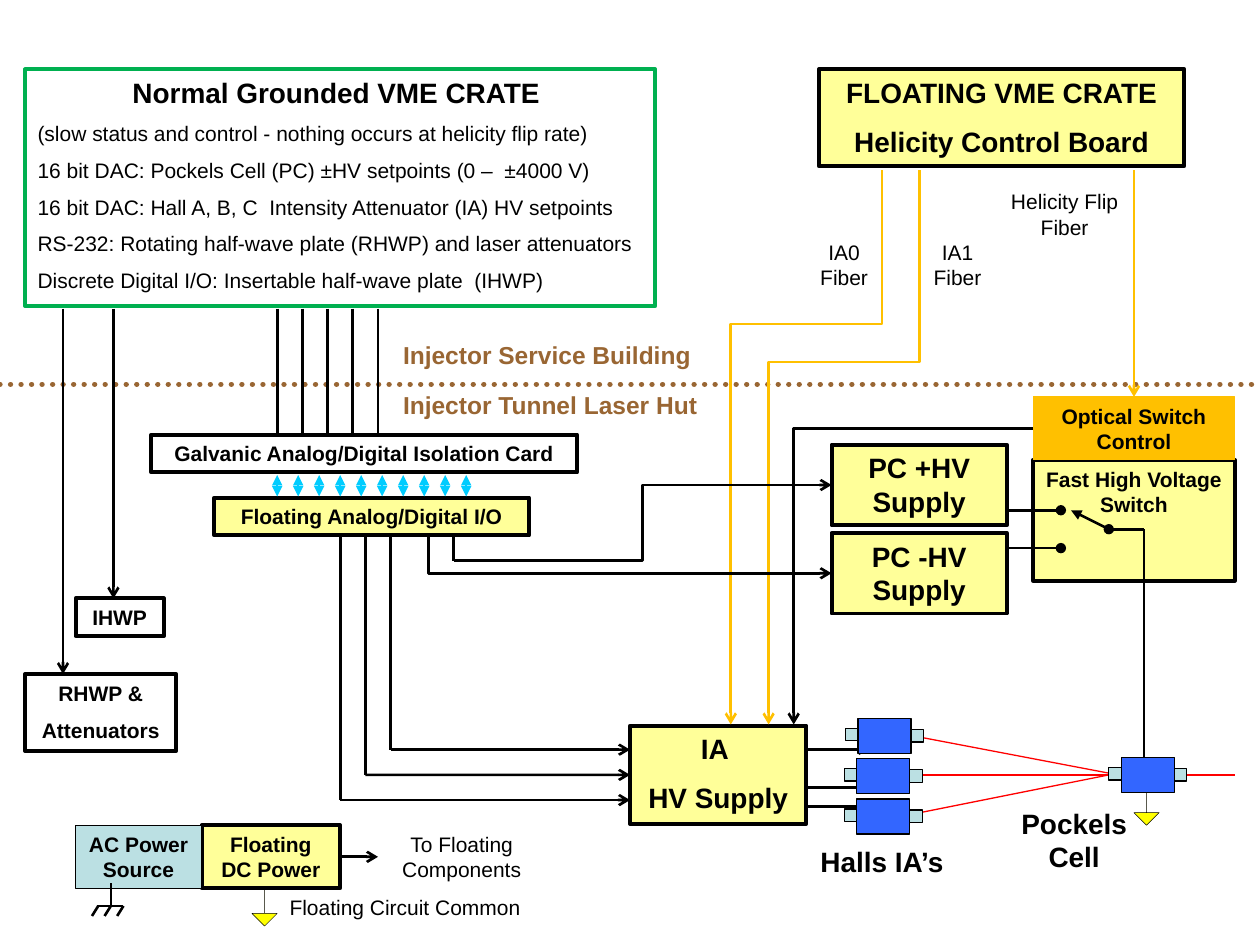
"""Build the helicity control and high-voltage wiring diagram slide."""
from lxml import etree
from pptx import Presentation
from pptx.dml.color import RGBColor
from pptx.enum.dml import MSO_LINE
from pptx.enum.shapes import MSO_CONNECTOR, MSO_SHAPE
from pptx.enum.text import MSO_ANCHOR, PP_ALIGN
from pptx.oxml.ns import qn
from pptx.util import Cm, Pt

RECT, DOWN_ARROW = MSO_SHAPE.RECTANGLE, MSO_SHAPE.DOWN_ARROW
STRAIGHT, ELBOW = MSO_CONNECTOR.STRAIGHT, MSO_CONNECTOR.ELBOW
LEFT, CENTER, TOP = PP_ALIGN.LEFT, PP_ALIGN.CENTER, MSO_ANCHOR.TOP
DOTTED = MSO_LINE.ROUND_DOT
TOP_SIDE, LEFT_SIDE, RIGHT_SIDE = 0, 1, 3
CM_PER_UNIT = 2.54
BLACK, YELLOW, AMBER, BROWN = "000000", "FFFF99", "FFC000", "996633"
PALE, BLUE, CYAN, RED, GREEN = "BBE0E3", "3366FF", "00CCFF", "FF0000", "00B050"

CRATE_TITLE = "Normal Grounded VME CRATE "
CRATE_DETAILS = [
    "(slow status and control - nothing occurs at helicity flip rate)",
    "16 bit DAC: Pockels Cell (PC) ±HV setpoints (0 –  ±4000 V)",
    "16 bit DAC: Hall A, B, C  Intensity Attenuator (IA) HV setpoints",
    "RS-232: Rotating half-wave plate (RHWP) and laser attenuators",
    "Discrete Digital I/O: Insertable half-wave plate  (IHWP)",
]
BOXES = [
    (["FLOATING VME CRATE", "Helicity Control Board"], (6.5, 0.55, 2.9, 0.77), 16, YELLOW),
    ([CRATE_TITLE], (0.2, 0.55, 5, 1.88), 16, None),
    (["Galvanic Analog/Digital Isolation Card"], (1.2, 3.45, 3.38, 0.3), 12, None),
    (["Floating Analog/Digital I/O"], (1.7, 3.95, 2.5, 0.3), 12, YELLOW),
    (["Floating DC Power"], (1.6, 6.55, 1.1, 0.5), 12, YELLOW),
    (["AC Power Source"], (0.6, 6.55, 1, 0.5), 12, PALE),
    (["PC +HV Supply"], (6.6, 3.53, 1.39, 0.64), 16, YELLOW),
    (["PC -HV Supply"], (6.6, 4.23, 1.39, 0.64), 16, YELLOW),
    (["Fast High Voltage Switch"], (8.2, 3.65, 1.6, 0.96), 12, YELLOW),
    (["Optical Switch Control"], (8.2, 3.15, 1.6, 0.5), 12, AMBER),
    (["RHWP &", "Attenuators"], (0.2, 5.35, 1.2, 0.61), 12, None),
    (["IHWP"], (0.6, 4.75, 0.7, 0.3), 12, None),
    (["IA ", "HV Supply"], (5, 5.76, 1.4, 0.78), 16, YELLOW),
]
OUTLINES = {CRATE_TITLE: (GREEN, 2.25), "AC Power Source": (BLACK, 0.75),
            "Optical Switch Control": (AMBER, 0.75)}
LABELS = [
    ("Injector Service Building", (3.1, 2.65, 2.58, 0.34), dict(size=14, bold=True, color=BROWN, align=LEFT)),
    ("Injector Tunnel Laser Hut", (3.1, 3.05, 2.65, 0.33), dict(size=14, bold=True, color=BROWN, align=LEFT)),
    ("To Floating Components", (3, 6.55, 1.33, 0.5), {}),
    ("Pockels Cell", (8, 6.35, 1.05, 0.64), dict(size=16, bold=True)),
    ("Floating Circuit Common", (2.2, 7.05, 2.2, 0.3), dict(align=LEFT)),
    ("Halls IA’s", (6.4, 6.65, 1.2, 0.37), dict(size=16, bold=True)),
    ("IA0 Fiber", (6.4, 1.85, 0.6, 0.5), {}),
    ("IA1 Fiber", (7.3, 1.85, 0.6, 0.5), {}),
    ("Helicity Flip Fiber", (7.9, 1.45, 1.1, 0.5), {}),
]
FLOATING_COMMONS = [(9, 6.15), (2, 6.95)]
BEAMS = [(9.4, 6.15, 9.8, 6.15), (7.3, 6.45, 8.8, 6.15),
         (7.3, 6.15, 8.8, 6.15), (7.3, 5.85, 8.82, 6.14)]
CHASSIS_GROUND = [(0.88, 7.01, 0.88, 7.19), (0.77, 7.19, 0.98, 7.19)] + [
    (x, 7.19, x - 0.05, 7.27) for x in (0.78, 0.88, 0.98)]
DAC_WIRES = [(2.2 + 0.2 * i, 2.45, 2.2 + 0.2 * i, 3.45) for i in range(5)]
IO_LINKS = [(2.2 + i / 6, 3.77, 2.2 + i / 6, 3.94) for i in range(10)]
SETPOINTS = [(2.7 + 0.2 * i, 6.35 - 0.2 * i) for i in range(3)]
SWITCH_CONTACTS = [(8.42, y, 8, y) for y in (4.05, 4.35)]
SWITCH_OUTPUT = [(9.08, 6.12, 9.08, 4.2), (9.08, 4.2, 8.8, 4.2)]
HALL_FEEDS = [(6.4, y, 6.9, y) for y in (5.95, 6.25, 6.4)]
PLATE_CONTROLS = [(0.5, 2.45, 0.5, 5.35), (0.9, 2.45, 0.9, 4.75)]
IA_FIBERS = [((7, 1.35, 5.8, 5.75), 0.278), ((7.3, 1.35, 6.1, 5.75), 0.346)]
CELLS = [(8.9, 6.01), (6.81, 5.7), (6.8, 6.02), (6.8, 6.34)]


def lengths(values):
    return [Cm(value * CM_PER_UNIT) for value in values]


def rgb(color):
    return RGBColor.from_string(color)


def write(frame, text, size=12, bold=False, color=BLACK, align=CENTER):
    first = not frame.text
    paragraph = frame.paragraphs[0] if first else frame.add_paragraph()
    paragraph.alignment = align
    paragraph.space_before = Pt(0 if first else round(size * 0.55, 1))
    run = paragraph.add_run()
    run.text = text
    run.font.name, run.font.size, run.font.bold = "Arial", Pt(size), bold
    run.font.color.rgb = rgb(color)


def add_block(shapes, box, fill, outline=BLACK, width=0.75, kind=RECT):
    block = shapes.add_shape(kind, *lengths(box))
    block.shadow.inherit = False
    if fill:
        block.fill.solid()
        block.fill.fore_color.rgb = rgb(fill)
    else:
        block.fill.background()
    block.line.color.rgb = rgb(outline)
    block.line.width = Pt(width)
    block.text_frame.word_wrap = True
    block.text_frame.vertical_anchor = TOP
    return block


def add_wire(shapes, ends, color=BLACK, width=1.5, head=None, tail=None,
             dash=None, kind=STRAIGHT, begin=None, end=None):
    wire = shapes.add_connector(kind, *lengths(ends))
    wire.line.color.rgb = rgb(color)
    wire.line.width = Pt(width)
    properties = wire._element.spPr
    outline = properties.find(qn("a:ln"))
    if dash:
        wire.line.dash_style = dash
        outline.set("cap", "rnd")
    for tag, arrow in (("a:headEnd", head), ("a:tailEnd", tail)):
        if arrow:
            etree.SubElement(outline, qn(tag), type=arrow)
    etree.SubElement(properties, qn("a:effectLst"))
    if begin:
        wire.begin_connect(*begin)
    if end:
        wire.end_connect(*end)
    return wire


def add_elbow(shapes, ends, turn, downward=False, **style):
    if downward:
        x1, y1, x2, y2 = ends
        middle_x, middle_y = (x1 + x2) / 2, (y1 + y2) / 2
        half_run, half_rise = (y2 - y1) / 2, (x1 - x2) / 2
        ends = (middle_x - half_run, middle_y - half_rise,
                middle_x + half_run, middle_y + half_rise)
    wire = add_wire(shapes, ends, kind=ELBOW, tail="arrow", **style)
    geometry = wire._element.spPr.find(qn("a:prstGeom"))
    if downward:
        wire._element.spPr.find(qn("a:xfrm")).set("rot", "5400000")
    if turn is None:
        geometry.set("prst", "bentConnector2")
    else:
        etree.SubElement(geometry.find(qn("a:avLst")), qn("a:gd"),
                         name="adj1", fmla=f"val {round(turn * 100000)}")


def main():
    deck = Presentation()
    deck.slide_width, deck.slide_height = lengths((10, 7.5))
    shapes = deck.slides.add_slide(deck.slide_layouts[6]).shapes
    parts = {}

    for beam in BEAMS:
        add_wire(shapes, beam, RED, 0.75)
    for x, y in FLOATING_COMMONS:
        common = add_block(shapes, (x, y, 0.2, 0.4), "FFFF00", width=0.25, kind=DOWN_ARROW)
        common.adjustments[0], common.adjustments[1] = 0, 0.5
    add_wire(shapes, (0, 3.05, 10, 3.05), BROWN, 3, dash=DOTTED)

    for lines, box, size, fill in BOXES:
        outline, width = OUTLINES.get(lines[0], (BLACK, 2.25))
        block = parts[lines[0]] = add_block(shapes, box, fill, outline, width)
        for line in lines:
            write(block.text_frame, line, size=size, bold=True)
    for detail in CRATE_DETAILS:
        write(parts[CRATE_TITLE].text_frame, detail, align=LEFT)
    for text, box, style in LABELS:
        label = parts[text] = shapes.add_textbox(*lengths(box))
        label.text_frame.word_wrap = True
        write(label.text_frame, text, **style)

    for ends in CHASSIS_GROUND + DAC_WIRES + SWITCH_OUTPUT:
        add_wire(shapes, ends)
    for ends in IO_LINKS:
        add_wire(shapes, ends, CYAN, 1.25, head="triangle", tail="triangle")
    for ends in SWITCH_CONTACTS:
        add_wire(shapes, ends, head="oval")
    add_wire(shapes, (8.8, 4.2, 8.5, 4.05), head="oval", tail="triangle")
    for ends in HALL_FEEDS:
        add_wire(shapes, ends, tail="triangle")
    for ends in PLATE_CONTROLS:
        add_wire(shapes, ends, tail="arrow")
    supply, optical = parts["IA "], parts["Optical Switch Control"]
    for index, (x, y) in enumerate(SETPOINTS):
        add_wire(shapes, (x, 4.25, x, y))
        add_wire(shapes, (x, y, 5, y), tail="arrow",
                 end=(supply, LEFT_SIDE) if index == 1 else None)
    add_wire(shapes, (2.7, 6.8, 3, 6.8), tail="arrow",
             begin=(parts["Floating DC Power"], RIGHT_SIDE),
             end=(parts["To Floating Components"], LEFT_SIDE))
    add_wire(shapes, (9, 1.35, 9, 3.15), AMBER, tail="arrow", end=(optical, TOP_SIDE))

    for ends, turn in IA_FIBERS:
        add_elbow(shapes, ends, turn, downward=True, color=AMBER)
    add_elbow(shapes, (8.2, 3.4, 6.3, 5.75), None, begin=(optical, LEFT_SIDE))
    add_elbow(shapes, (3.4, 4.25, 6.6, 4.55), 0, end=(parts["PC -HV Supply"], LEFT_SIDE))
    add_wire(shapes, (3.6, 4.25, 3.6, 4.45))
    add_elbow(shapes, (3.6, 4.45, 6.6, 3.85), 0.5, end=(parts["PC +HV Supply"], LEFT_SIDE))

    for x, y in CELLS:
        add_block(shapes, (x, y, 0.42, 0.28), BLUE)
        add_block(shapes, (x - 0.1, y + 0.08, 0.1, 0.1), PALE)
        add_block(shapes, (x + 0.42, y + 0.09, 0.1, 0.1), PALE)
    deck.save("out.pptx")


if __name__ == "__main__":
    main()
